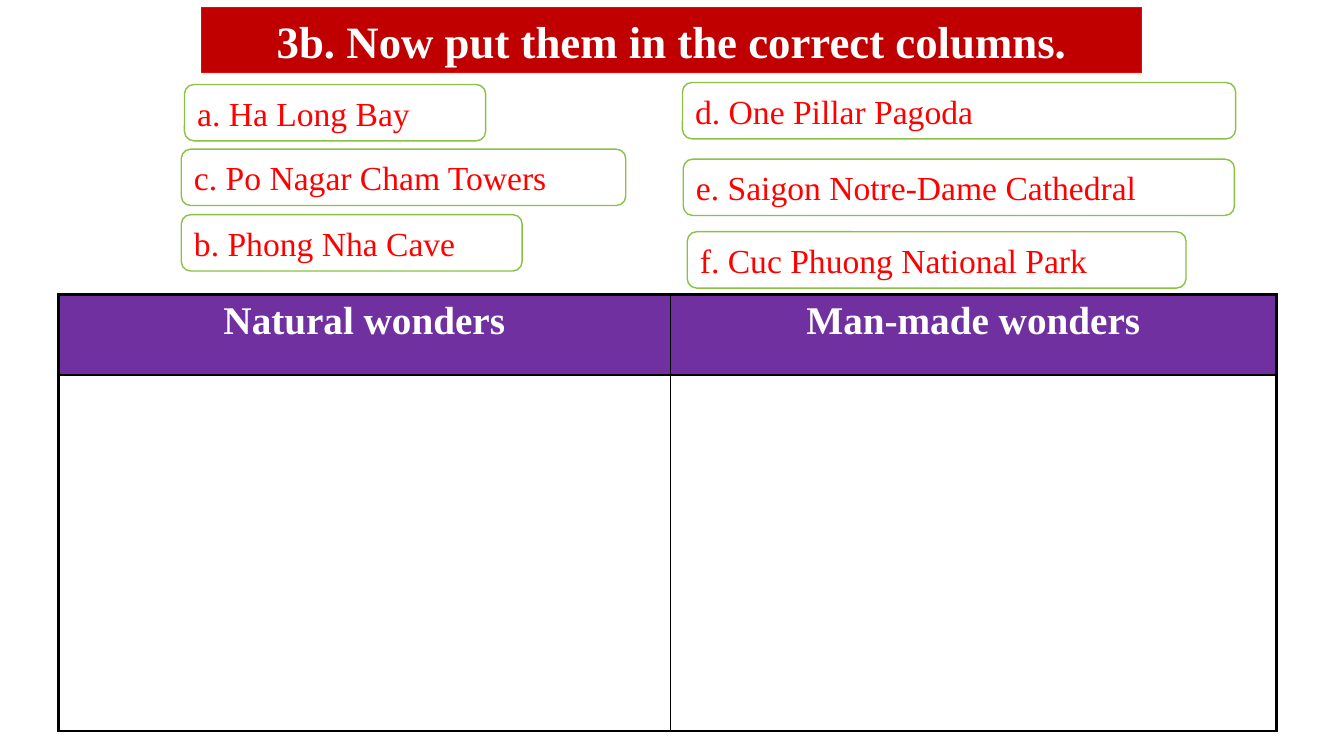
"""Build a vocabulary slide that sorts sights into natural and man-made wonders."""
from lxml import etree
from pptx import Presentation
from pptx.dml.color import RGBColor
from pptx.enum.shapes import MSO_SHAPE
from pptx.enum.text import MSO_ANCHOR, MSO_AUTO_SIZE, PP_ALIGN
from pptx.oxml.ns import qn
from pptx.util import Cm, Pt

ROUNDED = MSO_SHAPE.ROUNDED_RECTANGLE
MIDDLE = MSO_ANCHOR.MIDDLE
FIXED_SIZE = MSO_AUTO_SIZE.NONE
LEFT, CENTER = PP_ALIGN.LEFT, PP_ALIGN.CENTER

TITLE = "3b. Now put them in the correct columns."
TITLE_BOX = (5.08, 0.2, 23.7, 1.63)
SIGHTS = [
    ("a. Ha Long Bay", 4.65, 2.13, 7.59),
    ("c. Po Nagar Cham Towers", 4.57, 3.76, 11.2),
    ("b. Phong Nha Cave", 4.57, 5.41, 8.59),
    ("d. One Pillar Pagoda", 17.2, 2.08, 13.94),
    ("e. Saigon Notre-Dame Cathedral", 17.22, 4.01, 13.89),
    ("f. Cuc Phuong National Park", 17.32, 5.84, 12.57),
]
SIGHT_HEIGHT = 1.42
HEADINGS = ["Natural wonders", "Man-made wonders"]
TABLE_LEFT, TABLE_TOP = 1.47, 7.42
COLUMN_WIDTHS = [15.42, 15.27]
ROW_HEIGHTS = [2.03, 8.97]
OUTER_BORDER, INNER_BORDER = 2.25, 1

COLORS = {
    "banner": "C00000",
    "banner_line": "FF0000",
    "sight": "FF0000",
    "sight_line": "8BC145",
    "header": "7030A0",
    "border": "000000",
    "white": "FFFFFF",
}
FONT = "Times New Roman"
TITLE_FORMAT = {"name": FONT, "size": Pt(32), "bold": True}
SIGHT_FORMAT = {"name": FONT, "size": Pt(24), "bold": False}
HEADING_FORMAT = {"name": FONT, "size": Pt(28), "bold": True}


def color(name):
    return RGBColor.from_string(COLORS[name])


def write(text_frame, text, font_format, color_name, alignment):
    paragraph = text_frame.paragraphs[0]
    paragraph.alignment = alignment
    run = paragraph.add_run()
    run.text = text
    for attribute, value in font_format.items():
        setattr(run.font, attribute, value)
    run.font.color.rgb = color(color_name)


def style_box(shape, fill_name, line_name, line_width):
    shape.fill.solid()
    shape.fill.fore_color.rgb = color(fill_name)
    shape.line.color.rgb = color(line_name)
    shape.line.width = Pt(line_width)
    frame = shape.text_frame
    frame.word_wrap = True
    frame.auto_size = FIXED_SIZE
    frame.vertical_anchor = MIDDLE


def set_borders(cell, widths):
    properties = cell._tc.get_or_add_tcPr()
    for index, (side, width) in enumerate(widths.items()):
        line = etree.Element(qn(f"a:ln{side}"), w=str(Pt(width)))
        fill = etree.SubElement(line, qn("a:solidFill"))
        etree.SubElement(fill, qn("a:srgbClr"), val=COLORS["border"])
        properties.insert(index, line)


def add_title(slide):
    title = slide.shapes.title
    title.left, title.top, title.width, title.height = map(Cm, TITLE_BOX)
    style_box(title, "banner", "banner_line", 0.75)
    write(title.text_frame, TITLE, TITLE_FORMAT, "white", CENTER)


def add_sights(slide):
    for text, left, top, width in SIGHTS:
        shape = slide.shapes.add_shape(ROUNDED, Cm(left), Cm(top), Cm(width), Cm(SIGHT_HEIGHT))
        shape.shadow.inherit = False
        style_box(shape, "white", "sight_line", 1)
        write(shape.text_frame, text, SIGHT_FORMAT, "sight", LEFT)


def add_wonders_table(slide):
    row_count, column_count = len(ROW_HEIGHTS), len(COLUMN_WIDTHS)
    table = slide.shapes.add_table(
        row_count, column_count, Cm(TABLE_LEFT), Cm(TABLE_TOP),
        Cm(sum(COLUMN_WIDTHS)), Cm(sum(ROW_HEIGHTS)),
    ).table
    table.first_row = table.horz_banding = False
    for column, width in zip(table.columns, COLUMN_WIDTHS):
        column.width = Cm(width)
    for row_index, height in enumerate(ROW_HEIGHTS):
        table.rows[row_index].height = Cm(height)
        for column_index, heading in enumerate(HEADINGS):
            cell = table.cell(row_index, column_index)
            if row_index == 0:
                cell.fill.solid()
                cell.fill.fore_color.rgb = color("header")
                write(cell.text_frame, heading, HEADING_FORMAT, "white", CENTER)
            else:
                cell.fill.background()
            on_edge = {
                "L": column_index == 0,
                "R": column_index == column_count - 1,
                "T": row_index == 0,
                "B": row_index == row_count - 1,
            }
            set_borders(cell, {side: OUTER_BORDER if edge else INNER_BORDER
                               for side, edge in on_edge.items()})


def main():
    presentation = Presentation()
    presentation.slide_width, presentation.slide_height = Cm(33.87), Cm(19.05)
    slide = presentation.slides.add_slide(presentation.slide_layouts.get_by_name("Title Only"))
    add_title(slide)
    add_sights(slide)
    add_wonders_table(slide)
    presentation.save("out.pptx")


if __name__ == "__main__":
    main()
